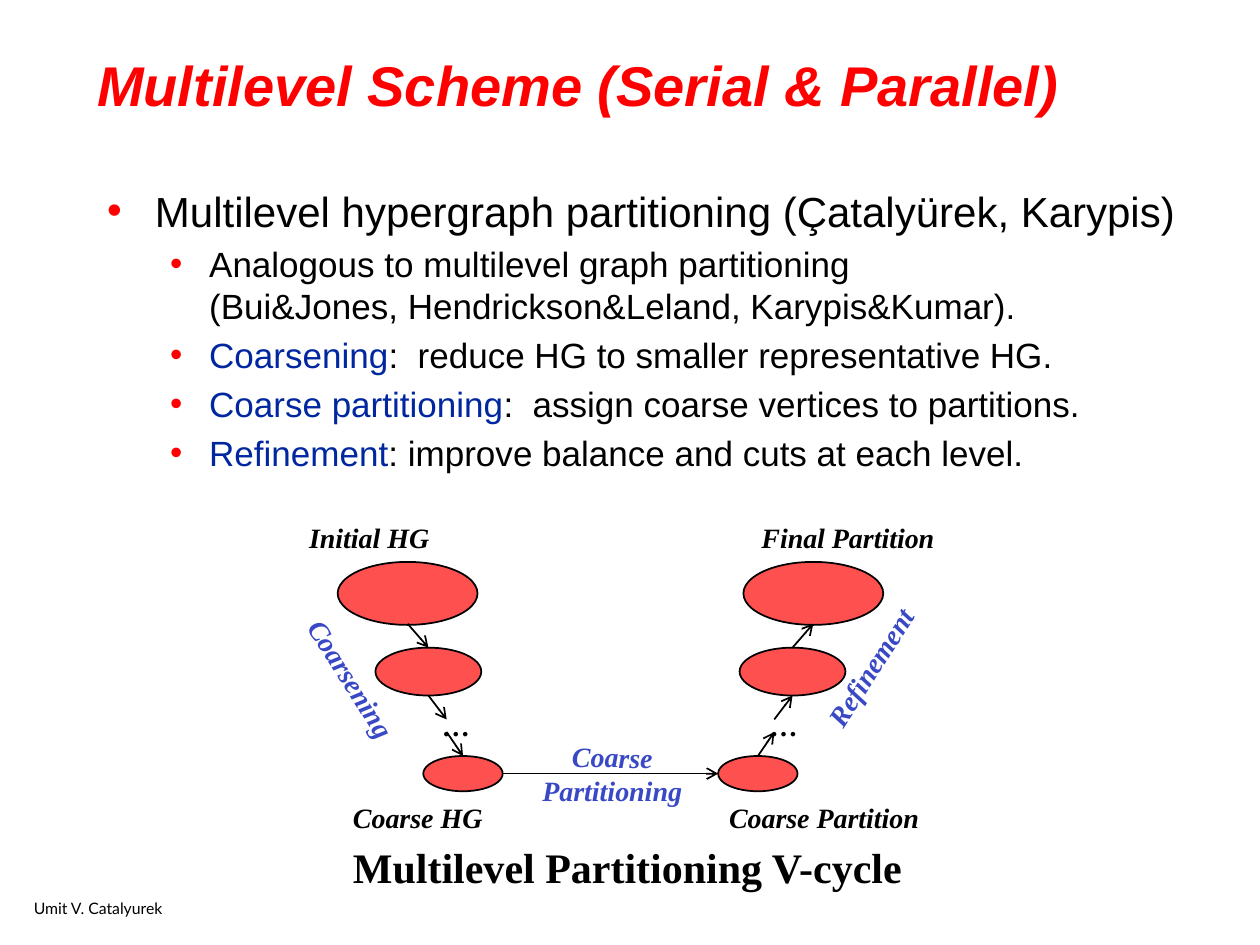
from lxml.etree import SubElement
from pptx import Presentation
from pptx.dml.color import RGBColor
from pptx.enum.shapes import MSO_CONNECTOR, MSO_SHAPE
from pptx.enum.text import MSO_ANCHOR, MSO_AUTO_SIZE, PP_ALIGN
from pptx.oxml.ns import qn
from pptx.util import Inches, Pt

RED = RGBColor(0xFF, 0x00, 0x00)
CORAL = RGBColor(0xFF, 0x50, 0x50)
NAVY = RGBColor(0x00, 0x27, 0x9F)
BLUE = RGBColor(0x39, 0x48, 0xC5)
BLACK = RGBColor(0x00, 0x00, 0x00)
SERIF = "Times New Roman"

presentation = Presentation()
presentation.slide_width, presentation.slide_height = Inches(10), Inches(7.5)
COL = presentation.slide_width / 100
ROW = presentation.slide_height / 75
slide = presentation.slides.add_slide(presentation.slide_layouts[1])
shapes = slide.shapes


def grid(left, top, width, height):
    return round(left * COL), round(top * ROW), round(width * COL), round(height * ROW)


def add_run(paragraph, text, size, font, color, bold=False, italic=False):
    run = paragraph.add_run()
    run.text = text
    run.font.size, run.font.name = Pt(size), font
    run.font.bold, run.font.italic = bold, italic
    run.font.color.rgb = color


# Title
title = shapes.title
title.left, title.top, title.width, title.height = grid(6.7, 3.3, 81.9, 6.7)
title.text_frame.auto_size = MSO_AUTO_SIZE.NONE
title.text_frame.vertical_anchor = MSO_ANCHOR.MIDDLE
heading = title.text_frame.paragraphs[0]
heading.alignment = PP_ALIGN.LEFT
add_run(heading, "Multilevel Scheme (Serial & Parallel)", 32, "Arial", RED, True, True)

# Bullet list: level, then lines of (text, colour) runs
points = [
    (0, [[("Multilevel hypergraph partitioning (Çatalyürek, Karypis)", BLACK)]]),
    (1, [[("Analogous to multilevel graph partitioning ", BLACK)],
         [("(Bui&Jones, Hendrickson&Leland, Karypis&Kumar).", BLACK)]]),
    (1, [[("Coarsening", NAVY), (":  reduce HG to smaller representative HG.", BLACK)]]),
    (1, [[("Coarse partitioning", NAVY), (":  assign coarse vertices to partitions.", BLACK)]]),
    (1, [[("Refinement", NAVY), (": improve balance and cuts at each level.", BLACK)]]),
]
LEVELS = [(24, 0.38, 0.38), (20, 0.81, 0.31)]  # size, margin, hanging indent
body = shapes.placeholders[1]
body.left, body.top, body.width, body.height = grid(7.5, 14.2, 90, 43.8)
body.text_frame.auto_size = MSO_AUTO_SIZE.NONE
for index, (level, lines) in enumerate(points):
    point = body.text_frame.add_paragraph() if index else body.text_frame.paragraphs[0]
    point.level = level
    size, margin, hanging = LEVELS[level]
    point.space_before = Pt(size * 0.2)
    properties = point._p.get_or_add_pPr()
    properties.set("marL", str(Inches(margin)))
    properties.set("indent", str(-Inches(hanging)))
    bullet_color = SubElement(properties, qn("a:buClr"))
    SubElement(bullet_color, qn("a:srgbClr")).set("val", str(RED))
    SubElement(properties, qn("a:buFont")).set("typeface", "Arial")
    SubElement(properties, qn("a:buChar")).set("char", "•")
    for number, line in enumerate(lines):
        if number:
            point.add_line_break()
        for text, color in line:
            add_run(point, text, size, "Arial", color)

# V-cycle: the right arm mirrors the left one
MIRROR = 96.9
levels = [(32.35, 44.6, 11.1, 5), (34, 51.4, 8.4, 3.8), (36.75, 60, 6.3, 2.8)]
DOTS_X, DOTS_TOP, DOTS_BOTTOM = 35.45, 57.1, 58.1
steps = [
    ((32.35, 49.5), (34, 51.4)),
    ((34, 55.2), (DOTS_X, DOTS_TOP)),
    ((DOTS_X, DOTS_BOTTOM), (36.75, 60)),
]
arrows = [((39.9, 61.4), (57, 61.4))]
for mirrored in (False, True):
    for center, top, width, height in levels:
        x = MIRROR - center if mirrored else center
        hypergraph = shapes.add_shape(MSO_SHAPE.OVAL, *grid(x - width / 2, top, width, height))
        hypergraph.shadow.inherit = False
        hypergraph.fill.solid()
        hypergraph.fill.fore_color.rgb = CORAL
        hypergraph.line.color.rgb = BLACK
        hypergraph.line.width = Pt(1)
    for (x1, y1), (x2, y2) in steps:
        if mirrored:
            arrows.append(((MIRROR - x2, y2), (MIRROR - x1, y1)))
        else:
            arrows.append(((x1, y1), (x2, y2)))

for start, end in arrows:
    arrow = shapes.add_connector(MSO_CONNECTOR.STRAIGHT, *grid(*start, *end))
    arrow.line.color.rgb = BLACK
    arrow.line.width = Pt(1)
    SubElement(arrow.line._get_or_add_ln(), qn("a:tailEnd")).set("type", "arrow")
    SubElement(arrow._element.spPr, qn("a:effectLst"))

# Labels: lines, box, rotation, size, colour, italic
labels = [
    (["…"], (DOTS_X - 1.35, DOTS_TOP, 2.7, 1), 0, 16, BLACK, False),
    (["…"], (MIRROR - DOTS_X - 1.35, DOTS_TOP, 2.7, 1), 0, 16, BLACK, False),
    (["Coarse HG"], (26.4, 63, 13.5, 3.7), 0, 16, BLACK, True),
    (["Initial HG"], (23.4, 40.8, 11.8, 3.7), 0, 16, BLACK, True),
    (["Final Partition"], (58.9, 40.8, 16.8, 3.7), 0, 16, BLACK, True),
    (["Coarse Partition"], (55.8, 63, 19.2, 3.7), 0, 16, BLACK, True),
    (["Coarsening"], (20.8, 52, 14.2, 3.7), 57.5, 16, BLUE, True),
    (["Refinement"], (62, 51.1, 14.1, 3.7), 302.7, 16, BLUE, True),
    (["Coarse", "Partitioning"], (41.4, 58.2, 14.4, 6.4), 0.2, 16, BLUE, True),
    (["Multilevel Partitioning V-cycle"], (25.2, 66.3, 49.2, 5), 0, 24, BLACK, False),
]
for lines, place, rotation, size, color, italic in labels:
    label = shapes.add_textbox(*grid(*place))
    label.rotation = rotation
    label.text_frame.word_wrap = False
    label.text_frame.vertical_anchor = MSO_ANCHOR.MIDDLE
    caption = label.text_frame.paragraphs[0]
    caption.alignment = PP_ALIGN.CENTER
    for number, text in enumerate(lines):
        if number:
            caption.add_line_break()
        add_run(caption, text, size, SERIF, color, True, italic)

# Footer
author = shapes.add_textbox(*grid(1.7, 70.8, 25, 2.5))
author.text_frame.word_wrap = True
add_run(author.text_frame.paragraphs[0], "Umit V. Catalyurek", 9, "Lato", BLACK)

presentation.save("out.pptx")
